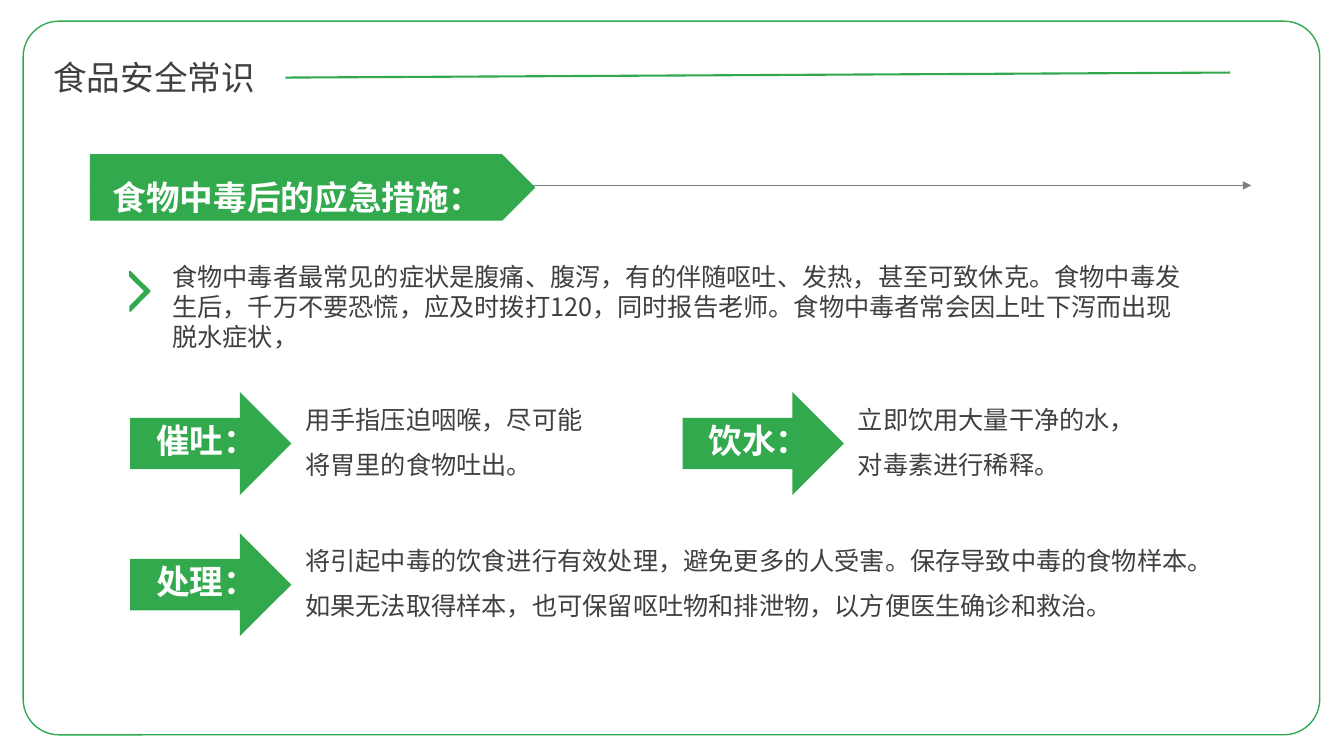
"""Build a slide on first aid after food poisoning."""
from lxml.etree import SubElement
from pptx import Presentation
from pptx.dml.color import RGBColor
from pptx.enum.shapes import MSO_CONNECTOR as Link, MSO_SHAPE as Form
from pptx.enum.text import MSO_AUTO_SIZE as Fit, PP_ALIGN as Align
from pptx.oxml.ns import qn
from pptx.util import Inches, Pt

GREEN = RGBColor(0x31, 0xA9, 0x4C)
WHITE = RGBColor(0xFF, 0xFF, 0xFF)
DARK = RGBColor(0x40, 0x40, 0x40)
GRAY = RGBColor(0x7F, 0x7F, 0x7F)
FONT = "Noto Sans CJK SC"


def add_form(slide, form, box, fill=GREEN, edge=None):
    shape = slide.shapes.add_shape(form, *map(Inches, box))
    shape.shadow.inherit = False
    shape.fill.solid()
    shape.fill.fore_color.rgb = fill
    if edge is None:
        shape.line.fill.background()
    else:
        shape.line.color.rgb = edge
        shape.line.width = Pt(1)
    return shape


def add_line(slide, start, end, color, width, arrow=False):
    line = slide.shapes.add_connector(Link.STRAIGHT, *map(Inches, start + end))
    line.line.color.rgb = color
    line.line.width = Pt(width)
    if arrow:
        SubElement(line.line._get_or_add_ln(), qn("a:tailEnd"), type="triangle")
    SubElement(line._element.spPr, qn("a:effectLst"))


def add_text(slide, box, text, size=18, color=DARK, bold=False, space=None, align=None):
    frame = slide.shapes.add_textbox(*map(Inches, box)).text_frame
    frame.word_wrap = True
    frame.auto_size = Fit.SHAPE_TO_FIT_TEXT
    para = frame.paragraphs[0]
    para.line_spacing = space
    para.alignment = align
    run = para.add_run()
    run.text = text
    run.font.size = Pt(size)
    run.font.bold = bold
    run.font.color.rgb = color
    run.font.name = FONT
    SubElement(run.font._element, qn("a:ea"), typeface=FONT)


def add_page(slide, x, y, w, h):
    frame = add_form(slide, Form.ROUNDED_RECTANGLE, (x, y, w, h), WHITE, GREEN)
    frame.adjustments[0] = 0.05
    add_text(slide, (x + 0.2, y + 0.31, 2.39, 0.5), "食品安全常识", 24, align=Align.JUSTIFY)
    add_line(slide, (x + 2.6, y + 0.56), (x + 11.97, y + 0.51), GREEN, 1.5)


def add_banner(slide, x, y, w, h):
    add_line(slide, (x, y + 0.31), (x + w, y + 0.31), GRAY, 0.5, True)
    add_form(slide, Form.PENTAGON, (x, y, 4.42, h))
    add_text(slide, (x + 0.13, y - 0.02, 4.02, 0.64), "食物中毒后的应急措施：",
             24, WHITE, True, 1.5)


def add_intro(slide, x, y, w, h):
    mark = add_form(slide, Form.HALF_FRAME, (x, y + 0.21, 0.28, 0.28), edge=GREEN)
    mark.adjustments[0] = mark.adjustments[1] = 0.125
    mark.rotation = 44.5
    mark._element.spPr.xfrm.set("flipH", "1")
    add_text(slide, (x + 0.46, y, w - 0.46, h),
             "食物中毒者最常见的症状是腹痛、腹泻，有的伴随呕吐、发热，甚至可致休克。"
             "食物中毒发生后，千万不要恐慌，应及时拨打120，同时报告老师。"
             "食物中毒者常会因上吐下泻而出现脱水症状，")


def add_step(slide, x, y, w, name, text):
    add_form(slide, Form.RIGHT_ARROW, (x, y, 1.6, 1.02))
    add_text(slide, (x + 1.64, y - 0.08, w - 1.64, 0.96), text, space=1.5)
    add_text(slide, (x + 0.16, y + 0.23, 1.26, 0.5), name, 24, WHITE, True)


def main():
    deck = Presentation()
    deck.slide_width, deck.slide_height = Inches(13.33), Inches(7.5)
    slide = deck.slides.add_slide(deck.slide_layouts[6])
    add_page(slide, 0.23, 0.21, 12.86, 7.08)
    add_banner(slide, 0.89, 1.53, 11.52, 0.66)
    add_intro(slide, 1.15, 2.54, 10.71, 1.01)
    steps = [
        (1.29, 3.89, 4.61, "催吐：", "用手指压迫咽喉，尽可能将胃里的食物吐出。"),
        (6.77, 3.89, 4.61, "饮水：", "立即饮用大量干净的水，对毒素进行稀释。"),
        (1.29, 5.29, 10.83, "处理：",
         "将引起中毒的饮食进行有效处理，避免更多的人受害。保存导致中毒的食物样本。"
         "如果无法取得样本，也可保留呕吐物和排泄物，以方便医生确诊和救治。"),
    ]
    for step in steps:
        add_step(slide, *step)
    deck.save("out.pptx")


if __name__ == "__main__":
    main()
